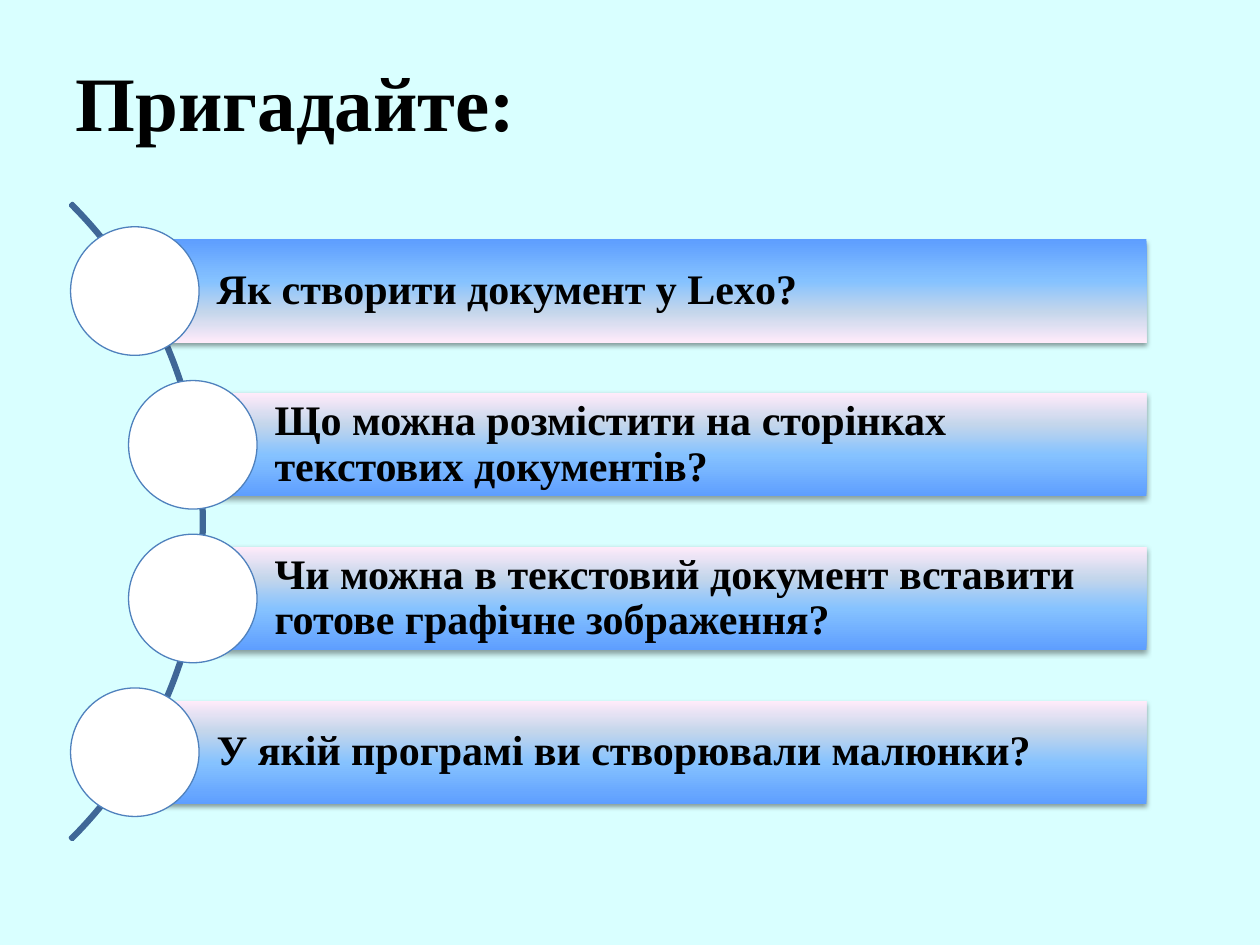
"""Build the recall slide: a title and four questions strung along an arc."""
from lxml import etree
from pptx import Presentation
from pptx import util as u
from pptx.dml.color import RGBColor
from pptx.enum import shapes, text
from pptx.oxml import parse_xml
from pptx.oxml.ns import nsdecls, qn

TITLE = "Пригадайте:"
# question, bar's left edge in inches, gradient angle in degrees
QUESTIONS = [
    ("Як створити документ у Lexo?", 1.07, 90),
    ("Що можна розмістити на сторінках текстових документів?", 1.53, 270),
    ("Чи можна в текстовий документ вставити готове графічне зображення?", 1.53, 270),
    ("У якій програмі ви створювали малюнки?", 1.07, 270),
]
GRADIENT = [(0, "5E9EFF"), (40, "85C2FF"), (70, "C4D6EB"), (100, "FFEBFA")]
FONT = "Times New Roman"
BLACK = RGBColor(0x00, 0x00, 0x00)
WHITE = RGBColor(0xFF, 0xFF, 0xFF)
PALE_CYAN = RGBColor(0xD9, 0xFF, 0xFF)
ARC_BLUE = RGBColor(0x3F, 0x67, 0x97)
RING_BLUE = RGBColor(0x4F, 0x81, 0xBD)

BAR_RIGHT, BAR_HEIGHT = 9.1, 0.82
FIRST_TOP, ROW_STEP = 1.9, 1.22
CIRCLE = 1.02


def add_shape(page, kind, left, top, width, height):
    shape = page.shapes.add_shape(kind, *map(u.Inches, (left, top, width, height)))
    shape.shadow.inherit = False
    return shape


def set_outline(shape, color, width):
    shape.line.color.rgb = color
    shape.line.width = u.Pt(width)


def style_text(box, words, size):
    frame = box.text_frame
    frame.word_wrap = True
    frame.vertical_anchor = text.MSO_ANCHOR.MIDDLE
    para = frame.paragraphs[0]
    para.text = words
    para.alignment = text.PP_ALIGN.LEFT
    para.font.name, para.font.size, para.font.bold = FONT, u.Pt(size), True
    para.font.color.rgb = BLACK
    return frame, para


def paint_bar(bar, angle):
    bar.line.fill.background()
    bar.fill.gradient()
    gradient = bar._element.spPr.find(qn("a:gradFill"))
    stops = gradient.find(qn("a:gsLst"))
    for stop in list(stops):
        stops.remove(stop)
    for position, color in GRADIENT:
        stop = etree.SubElement(stops, qn("a:gs"), pos=str(position * 1000))
        etree.SubElement(stop, qn("a:srgbClr"), val=color)
    gradient.find(qn("a:lin")).set("ang", str(angle * 60000))
    bar._element.spPr.find(qn("a:effectLst")).append(parse_xml(
        f'<a:outerShdw {nsdecls("a")} blurRad="{u.Pt(3.1)}" dist="{u.Pt(1.6)}" '
        'dir="5400000" rotWithShape="0"><a:srgbClr val="000000">'
        '<a:alpha val="38000"/></a:srgbClr></a:outerShdw>'))


def add_question(page, row, words, left, angle):
    top = FIRST_TOP + row * ROW_STEP
    bar = add_shape(page, shapes.MSO_SHAPE.RECTANGLE,
                    left, top, BAR_RIGHT - left, BAR_HEIGHT)
    paint_bar(bar, angle)
    frame, para = style_text(bar, words, 24)
    frame.margin_left = u.Inches(0.65)
    frame.margin_top = frame.margin_right = frame.margin_bottom = u.Inches(0.07)
    para.line_spacing = 0.9
    circle = add_shape(page, shapes.MSO_SHAPE.OVAL, left - CIRCLE / 2,
                       top + (BAR_HEIGHT - CIRCLE) / 2, CIRCLE, CIRCLE)
    circle.fill.solid()
    circle.fill.fore_color.rgb = WHITE
    set_outline(circle, RING_BLUE, 0.75)


def main():
    deck = Presentation()
    deck.slide_width, deck.slide_height = u.Inches(10), u.Inches(7.5)
    page = deck.slides.add_slide(deck.slide_layouts[5])
    page.background.fill.solid()
    page.background.fill.fore_color.rgb = PALE_CYAN

    title = page.shapes.title
    title.left, title.top, title.width, title.height = map(
        u.Inches, (0.5, 0.35, 7.92, 0.9))
    style_text(title, TITLE, 44)

    arc = add_shape(page, shapes.MSO_SHAPE.BLOCK_ARC, -5.52, 0.57, 7.14, 7.14)
    for index, value in enumerate((189, 27, 0.003)):
        arc.adjustments[index] = value
    arc.fill.background()
    set_outline(arc, ARC_BLUE, 2)

    for row, question in enumerate(QUESTIONS):
        add_question(page, row, *question)
    deck.save("out.pptx")


if __name__ == "__main__":
    main()
